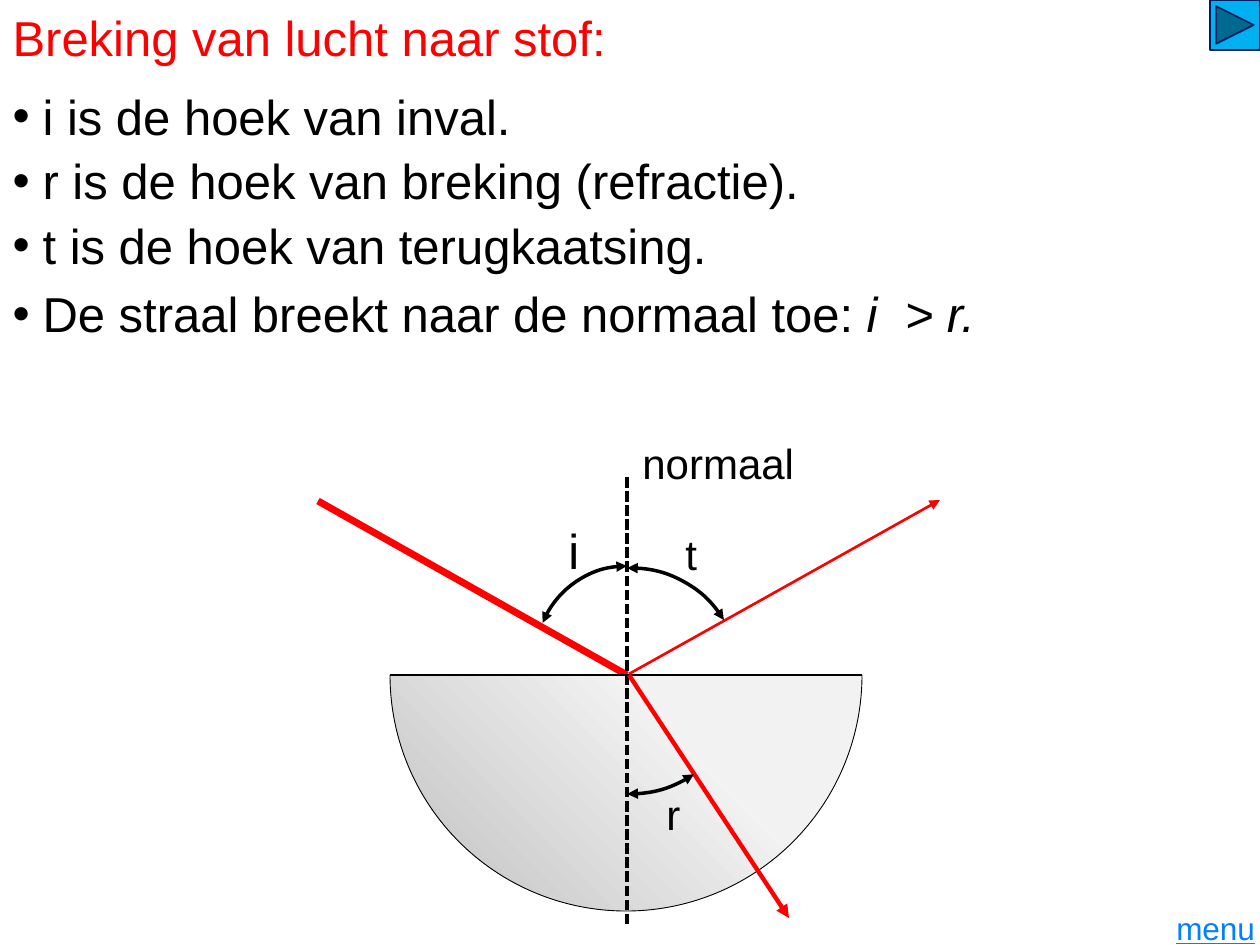
from pptx import Presentation
from pptx.dml.color import RGBColor
from pptx.enum.dml import MSO_LINE
from pptx.enum.shapes import MSO_CONNECTOR, MSO_SHAPE
from pptx.enum.text import MSO_ANCHOR, MSO_AUTO_SIZE, PP_ALIGN
from pptx.oxml.ns import qn
from pptx.util import Emu, Pt
from lxml import etree

LEFT, RIGHT = PP_ALIGN.LEFT, PP_ALIGN.RIGHT
TOP, MIDDLE = MSO_ANCHOR.TOP, MSO_ANCHOR.MIDDLE
DASH = MSO_LINE.SQUARE_DOT
PX = 914400 / 126

THEME = {
    "font": "Arial",
    "text": "000000", "accent": "FF0000", "link": "0080FF",
    "glass_light": "F2F2F2", "glass_dark": "BFBFBF",
    "button": "00B0F0", "button_line": "002060",
    "large": 28, "medium": 24, "small": 18,
}

TITLE = "Breking van lucht naar stof:"
# runs (text, italic), space before in points
BULLETS = [
    ([("i is de hoek van inval.", False)], 0),
    ([("r is de hoek van breking (refractie).", False)], 3.3),
    ([("t is de hoek van terugkaatsing.", False)], 3.3),
    ([("De straal breekt naar de normaal toe: ", False), ("i  > r.", True)], 5.5),
]
# text, box in px, format, extra font values, alignment, anchor
LABELS = [
    ("i", (556, 514, 95, 72), "large", "text", {}, LEFT, TOP),
    ("t", (673, 522, 37, 57), "medium", "text", {}, LEFT, TOP),
    ("r", (654, 782, 39, 63), "medium", "text", {}, LEFT, TOP),
    ("normaal", (630, 431, 203, 63), "medium", "text", {}, LEFT, TOP),
    ("menu", (1165, 910, 95, 35), "small", "link", {"underline": True}, RIGHT, MIDDLE),
]
# start, end in px, colour, width in points, dash, arrowhead at the end
INCIDENT_RAY = ((318, 501), (627, 675), "accent", 4, None, False)
LINES = [
    ((862, 675), (390, 675), "text", 0.75, None, False),  # flat side of the glass
    ((627, 477), (627, 924), "text", 2, DASH, False),  # normal
    ((629, 675), (789, 918), "accent", 2.5, None, True),  # refracted ray
    ((629, 674), (940, 500), "accent", 1.5, None, True),  # reflected ray
]
GLASS = ((626, 675), 236, 0, 180)
# centre and radius in px, start and end in degrees clockwise from the right
ANGLES = [
    ((627, 657), 91, 202, 270),  # i
    ((631, 677), 109, 268, 328.5),  # t
    ((629, 677), 117, 56.3, 90.8),  # r
]
BUTTON_BOX = (1210, 0, 50, 50)


def px(*values):
    return [Emu(round(value * PX)) for value in values]


def rgb(name):
    return RGBColor.from_string(THEME[name])


def apply(target, values):
    for name, value in values.items():
        setattr(target, name, value)


def add_run(paragraph, text, size="large", colour="text", **extra):
    run = paragraph.add_run()
    run.text = text
    apply(run.font, {"name": THEME["font"], "size": Pt(THEME[size]), **extra})
    run.font.color.rgb = rgb(colour)


def place(shape, box):
    apply(shape, dict(zip(("left", "top", "width", "height"), px(*box))))


def set_line(shape, colour, width, heads=()):
    """Colour the outline; heads lists headEnd and/or tailEnd."""
    shape.line.color.rgb = rgb(colour)
    shape.line.width = Pt(width)
    for head in heads:
        etree.SubElement(shape.line._get_or_add_ln(), qn("a:" + head), type="triangle")


def add_line(slide, start, end, colour, width, dash, arrow):
    line = slide.shapes.add_connector(MSO_CONNECTOR.STRAIGHT, *px(*start, *end))
    if dash:
        line.line.dash_style = dash
    set_line(line, colour, width, ["tailEnd"] if arrow else [])
    etree.SubElement(line._element.spPr, qn("a:effectLst"))


def add_arc(slide, centre, radius, start, end):
    x, y = centre
    box = px(x - radius, y - radius, 2 * radius, 2 * radius)
    arc = slide.shapes.add_shape(MSO_SHAPE.ARC, *box)
    # an adjustment of 0.6 is one degree
    arc.adjustments[0], arc.adjustments[1] = start * 0.6, end * 0.6
    arc.shadow.inherit = False
    return arc


def add_glass(slide):
    glass = add_arc(slide, *GLASS)
    glass.fill.gradient()
    glass.fill.gradient_angle = 225
    stops = zip(glass.fill.gradient_stops, (0.5, 1), ("glass_light", "glass_dark"))
    for stop, position, colour in stops:
        stop.position = position
        stop.color.rgb = rgb(colour)
    set_line(glass, "text", 0.5)


def add_label(slide, text, box, size, colour, extra, alignment, anchor):
    label = slide.shapes.add_textbox(*px(*box))
    apply(label.text_frame, {"word_wrap": True, "vertical_anchor": anchor})
    if alignment == RIGHT:
        margins = ("margin_left", "margin_top", "margin_right", "margin_bottom")
        apply(label.text_frame, dict.fromkeys(margins, px(5)[0]))
    paragraph = label.text_frame.paragraphs[0]
    paragraph.alignment = alignment
    add_run(paragraph, text, size, colour, **extra)


def fill_placeholders(slide):
    title, body = slide.placeholders
    for shape, box, anchor in ((title, (0, 0, 1260, 73), MIDDLE),
                               (body, (0, 80, 1260, 260), TOP)):
        place(shape, box)
        apply(shape.text_frame, {"vertical_anchor": anchor, "word_wrap": True,
                                 "auto_size": MSO_AUTO_SIZE.NONE})
    heading = title.text_frame.paragraphs[0]
    heading.alignment = LEFT
    add_run(heading, TITLE, colour="accent")
    frame = body.text_frame
    for index, (runs, space) in enumerate(BULLETS):
        paragraph = frame.add_paragraph() if index else frame.paragraphs[0]
        indent = px(30)[0]
        properties = paragraph._p.get_or_add_pPr()
        properties.set("marL", str(indent))
        properties.set("indent", str(-indent))
        paragraph.space_before = Pt(space)
        for text, italic in runs:
            add_run(paragraph, text, italic=italic)


def main():
    presentation = Presentation()
    presentation.slide_width, presentation.slide_height = px(1260, 945)
    slide = presentation.slides.add_slide(presentation.slide_layouts[1])
    fill_placeholders(slide)
    add_line(slide, *INCIDENT_RAY)
    add_glass(slide)
    for line in LINES:
        add_line(slide, *line)
    for angle in ANGLES:
        arc = add_arc(slide, *angle)
        arc.fill.background()
        set_line(arc, "text", 2, ["headEnd", "tailEnd"])
    for label in LABELS:
        add_label(slide, *label)
    button = slide.shapes.add_shape(
        MSO_SHAPE.ACTION_BUTTON_FORWARD_OR_NEXT, *px(*BUTTON_BOX))
    button.shadow.inherit = False
    button.fill.solid()
    button.fill.fore_color.rgb = rgb("button")
    set_line(button, "button_line", 1)
    presentation.save("out.pptx")


if __name__ == "__main__":
    main()
